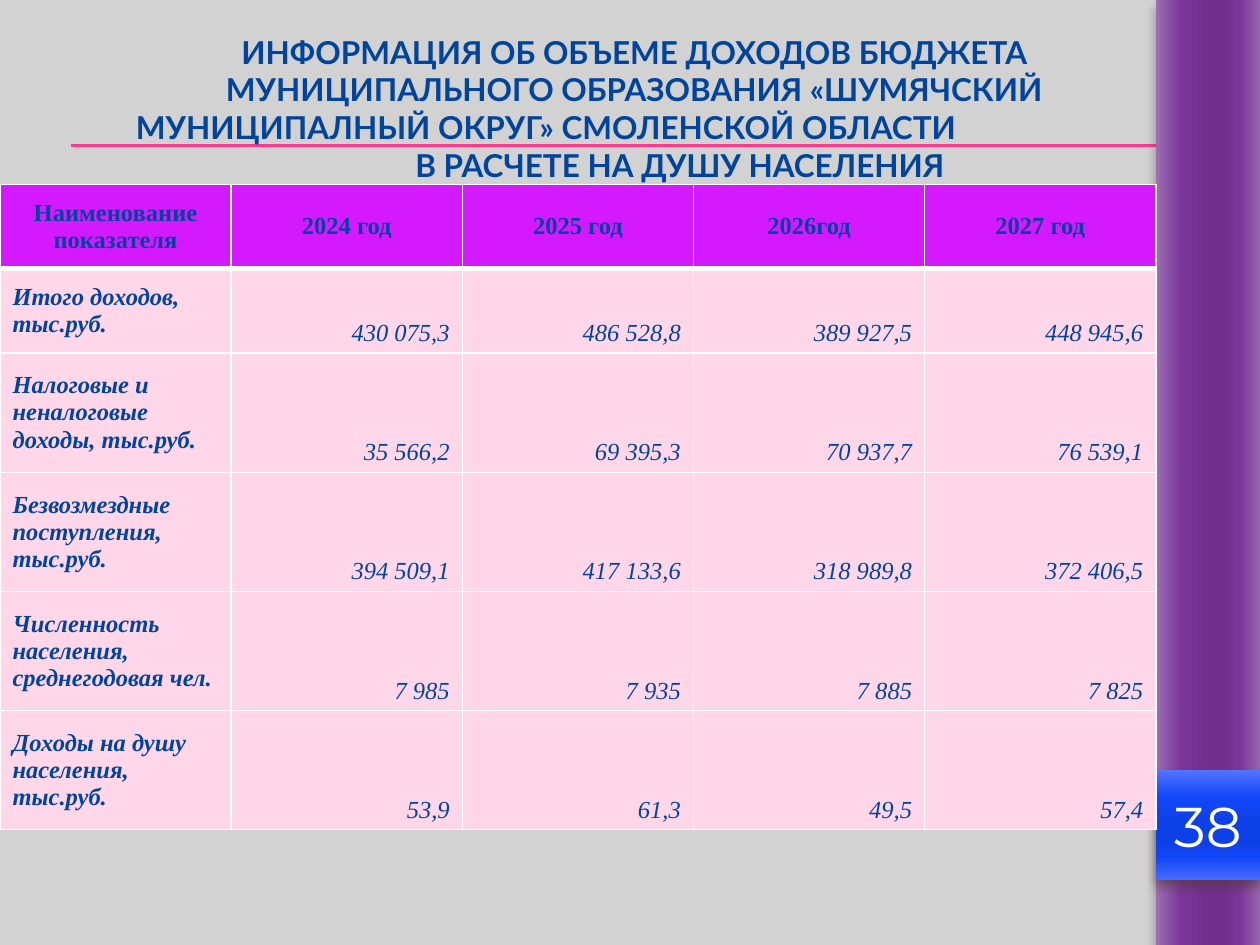
from lxml import etree
from pptx import Presentation
from pptx.dml.color import RGBColor
from pptx.enum.shapes import MSO_CONNECTOR, MSO_SHAPE
from pptx.enum.text import MSO_ANCHOR, MSO_AUTO_SIZE, PP_ALIGN
from pptx.oxml import parse_xml
from pptx.oxml.ns import nsdecls, qn
from pptx.util import Pt

LEFT, CENTER, RIGHT = PP_ALIGN.LEFT, PP_ALIGN.CENTER, PP_ALIGN.RIGHT
TOP, MIDDLE, BOTTOM = MSO_ANCHOR.TOP, MSO_ANCHOR.MIDDLE, MSO_ANCHOR.BOTTOM
RECTANGLE, STRAIGHT = MSO_SHAPE.RECTANGLE, MSO_CONNECTOR.STRAIGHT
NO_AUTOFIT = MSO_AUTO_SIZE.NONE
TITLE_ONLY = 5

COLORS = {
    "background": "D2D2D2", "rule": "FF388C", "text": "00449E",
    "header": "D519FF", "body": "FFD7E8", "white": "FFFFFF", "shadow": "4E3B30",
}
GRADIENT_POSITIONS = (0, 25, 50, 65, 80, 100)
PURPLE = ("9C6FB3", "7A3599", "71308E", "71308E", "7A3598", "9566AD")
BLUE = ("5374FF", "1147F8", "0E40E7", "0E40E7", "1147F6", "476AFD")

TITLE = [
    ("ИНФОРМАЦИЯ ОБ ОБЪЕМЕ ДОХОДОВ БЮДЖЕТА МУНИЦИПАЛЬНОГО ОБРАЗОВАНИЯ «ШУМЯЧСКИЙ", CENTER, 0),
    ("МУНИЦИПАЛНЫЙ ОКРУГ» СМОЛЕНСКОЙ ОБЛАСТИ", LEFT, 0),
    ("В РАСЧЕТЕ НА ДУШУ НАСЕЛЕНИЯ", CENTER, 52),
]
ROWS = [
    ("Наименование показателя", "2024 год", "2025 год", "2026год", "2027 год"),
    ("Итого доходов, тыс.руб.", "430 075,3", "486 528,8", "389 927,5", "448 945,6"),
    ("Налоговые и неналоговые доходы, тыс.руб.", "35 566,2", "69 395,3", "70 937,7", "76 539,1"),
    ("Безвозмездные поступления, тыс.руб.", "394 509,1", "417 133,6", "318 989,8", "372 406,5"),
    ("Численность населения, среднегодовая чел.", "7 985", "7 935", "7 885", "7 825"),
    ("Доходы на душу населения, тыс.руб.", "53,9", "61,3", "49,5", "57,4"),
]


class SlideBuilder:
    """Draws styled elements on the current slide, with lengths in points."""

    def __init__(self, slide):
        self.slide = slide
        fill = slide.background.fill
        fill.solid()
        fill.fore_color.rgb = RGBColor.from_string(COLORS["background"])

    def style(self, paragraph, font_name, size, color, align, bold=False, italic=False):
        paragraph.alignment = align
        font = paragraph.font
        font.name, font.size, font.bold, font.italic = font_name, Pt(size), bold, italic
        font.color.rgb = RGBColor.from_string(COLORS[color])

    def rule(self, left, right, y):
        line = self.slide.shapes.add_connector(STRAIGHT, Pt(left), Pt(y), Pt(right), Pt(y))
        line.line.color.rgb = RGBColor.from_string(COLORS["rule"])
        line.line.width = Pt(0.75)
        etree.SubElement(line._element.spPr, qn("a:effectLst"))

    def band(self, left, top, width, height, gradient, rotation=0):
        shape = self.slide.shapes.add_shape(RECTANGLE, Pt(left), Pt(top), Pt(width), Pt(height))
        shape.rotation = rotation
        shape.line.fill.background()
        stops = "".join(
            f'<a:gs pos="{position * 1000}"><a:srgbClr val="{color}"/></a:gs>'
            for position, color in zip(GRADIENT_POSITIONS, gradient))
        properties = shape._element.spPr
        properties.find(qn("a:ln")).addprevious(parse_xml(
            f'<a:gradFill {nsdecls("a")} rotWithShape="1"><a:gsLst>{stops}</a:gsLst>'
            '<a:lin ang="5400000" scaled="0"/></a:gradFill>'))
        properties.append(parse_xml(
            f'<a:effectLst {nsdecls("a")}><a:outerShdw blurRad="{Pt(6)}" dist="{Pt(4)}" '
            f'dir="5400000" rotWithShape="0"><a:srgbClr val="{COLORS["shadow"]}">'
            '<a:alpha val="60000"/></a:srgbClr></a:outerShdw></a:effectLst>'))
        return shape

    def page_number(self, text, left, top, width, height):
        frame = self.band(left, top, width, height, BLUE).text_frame
        frame.vertical_anchor = MIDDLE
        frame.word_wrap = False
        frame.text = text
        self.style(frame.paragraphs[0], "Montserrat", 32, "white", CENTER)

    def title(self, lines, left, top, width, height):
        title = self.slide.shapes.title
        title.left, title.top, title.width, title.height = Pt(left), Pt(top), Pt(width), Pt(height)
        self.slide.shapes._spTree.append(title._element)
        frame = title.text_frame
        frame.word_wrap, frame.auto_size, frame.vertical_anchor = True, NO_AUTOFIT, TOP
        frame.text = "\n".join(text for text, _, _ in lines)
        for paragraph, (_, align, indent) in zip(frame.paragraphs, lines):
            paragraph._p.get_or_add_pPr().set("marL", str(Pt(indent)))
            self.style(paragraph, "Lato", 18, "text", align, bold=True)

    def borders(self, cell, **widths):
        properties = cell._tc.get_or_add_tcPr()
        for side in "LRTB":
            properties.append(parse_xml(
                f'<a:ln{side} {nsdecls("a")} w="{Pt(widths.get(side, 1))}"><a:solidFill>'
                f'<a:srgbClr val="{COLORS["white"]}"/></a:solidFill></a:ln{side}>'))

    def cell(self, cell, text, row, column):
        header, label = row == 0, column == 0
        self.borders(cell, **{0: {"B": 3}, 1: {"T": 3}}.get(row, {}))
        cell.fill.solid()
        cell.fill.fore_color.rgb = RGBColor.from_string(COLORS["header" if header else "body"])
        cell.vertical_anchor = MIDDLE if header or label else BOTTOM
        cell.text = text
        align = CENTER if header else LEFT if label else RIGHT
        self.style(cell.text_frame.paragraphs[0], "Times New Roman", 14, "text", align,
                   bold=header or label, italic=not header)

    def table(self, rows, left, top, column_width, row_heights):
        count = len(rows[0])
        table = self.slide.shapes.add_table(
            len(rows), count, Pt(left), Pt(top),
            Pt(column_width * count), Pt(sum(row_heights))).table
        table.horz_banding = False
        for column in table.columns:
            column.width = Pt(column_width)
        for row, (texts, height) in enumerate(zip(rows, row_heights)):
            table.rows[row].height = Pt(height)
            for column, text in enumerate(texts):
                self.cell(table.cell(row, column), text, row, column)


def main():
    presentation = Presentation()
    presentation.slide_width, presentation.slide_height = Pt(720), Pt(540)
    layout = presentation.slide_layouts[TITLE_ONLY]
    builder = SlideBuilder(presentation.slides.add_slide(layout))
    for y in (82.8, 83.5):
        builder.rule(40.5, 720, y)
    builder.band(420.25, 240.25, 540, 59.5, PURPLE, rotation=270)
    builder.page_number("38", 660.5, 440, 59.5, 62.5)
    builder.title(TITLE, 70.5, 15, 584, 94.5)
    builder.table(ROWS, 0, 105.3, 132.1, [48, 48.5] + [68.1] * 4)
    presentation.save("out.pptx")


if __name__ == "__main__":
    main()
